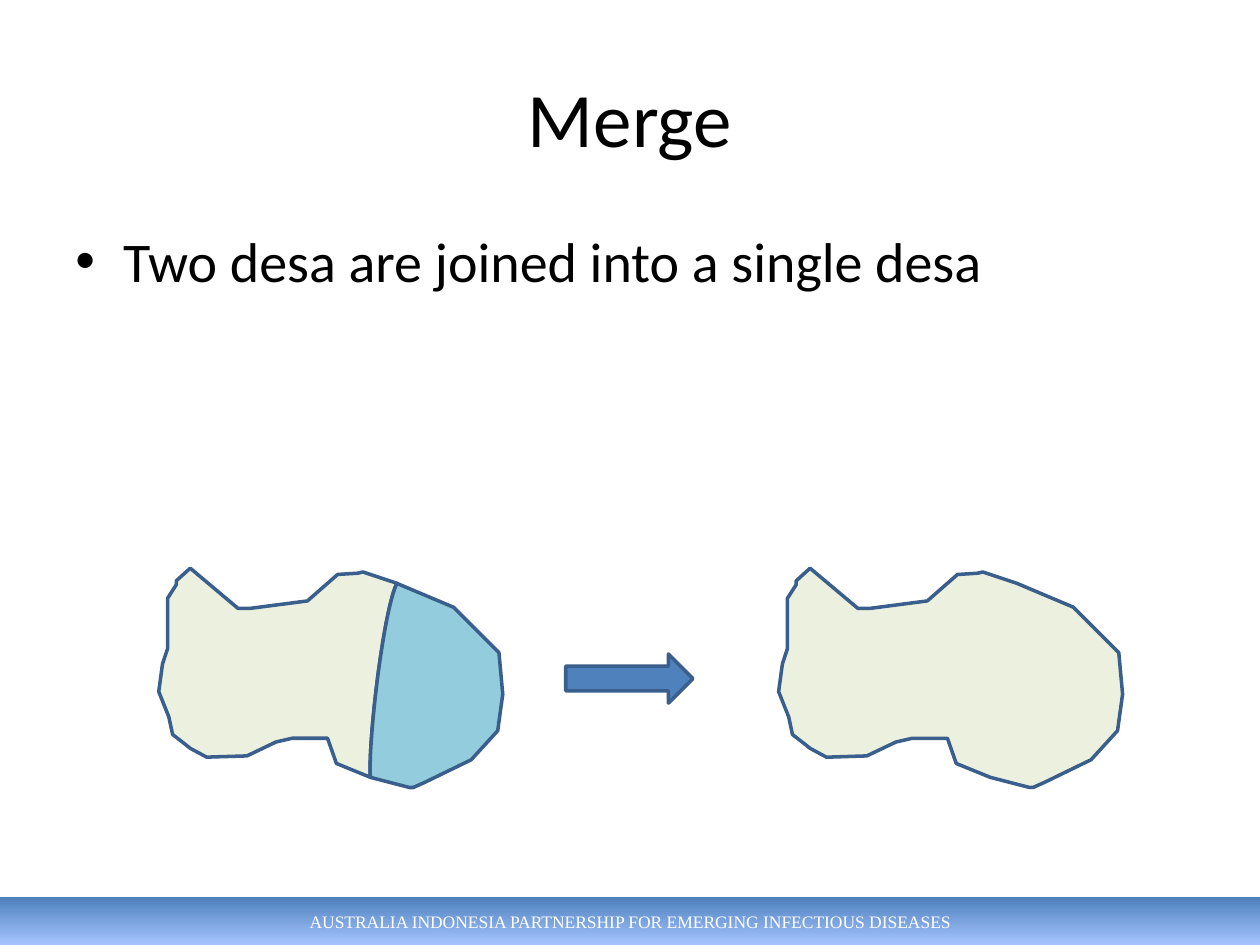
from lxml import etree
from pptx import Presentation, util as u
from pptx.dml.color import RGBColor
from pptx.enum import shapes, text
from pptx.oxml.ns import qn

SCALE = 9144
BLACK, WHITE, BLUE = "000000", "FFFFFF", "4F81BD"
OUTLINE, CREAM, AQUA = "3A5F8C", "EBF1DE", "93CDDD"

DIVIDER_CURVE = [(189, 12), (178, 35), (166, 139), (168, 166)]
WEST_BORDER = [
    (168, 166), (141, 155), (134, 135), (106, 135), (93, 138), (70, 149),
    (38, 150), (25, 143), (20, 139), (11, 132), (8, 118), (0, 98), (3, 76),
    (7, 64), (7, 24), (14, 13), (14, 10), (25, 0), (63, 32), (72, 32),
    (118, 26), (142, 5), (158, 4), (162, 3), (189, 12),
]
EAST_BORDER = [
    (189, 12), (234, 31), (270, 67), (273, 100), (269, 129), (248, 152),
    (211, 170), (202, 174), (199, 174), (168, 166),
]


def px(*lengths):
    """Turn px lengths into EMU."""
    return [u.Emu(round(length * SCALE)) for length in lengths]


def color(value):
    """Return the colour of a hex string."""
    return RGBColor.from_string(value)


def apply(target, formats):
    """Set each attribute of a target from a dict."""
    for name, value in formats.items():
        setattr(target, name, value)


def write(shape, words, size, font, ink, align, anchor):
    """Write one formatted paragraph into a shape and return it."""
    frame = shape.text_frame
    apply(frame, {"word_wrap": True, "vertical_anchor": anchor})
    paragraph = frame.paragraphs[0]
    paragraph.alignment = align
    run = paragraph.add_run()
    run.text = words
    apply(run.font, {"size": u.Pt(size), "name": font})
    run.font.color.rgb = color(ink)
    return paragraph


def paint(shape, fill):
    """Give a map shape a flat fill and the shared outline."""
    shape.shadow.inherit = False
    shape.fill.solid()
    shape.fill.fore_color.rgb = color(fill)
    shape.line.color.rgb = color(OUTLINE)
    shape.line.width = u.Pt(2)


def curve(points, steps=24):
    """Sample a cubic Bezier curve, ends included."""
    samples = []
    for step in range(steps + 1):
        t = step / steps
        weights = ((1 - t) ** 3, 3 * t * (1 - t) ** 2, 3 * t * t * (1 - t), t ** 3)
        samples.append(tuple(
            sum(weight * point[axis] for weight, point in zip(weights, points))
            for axis in (0, 1)))
    return samples


def add_title(slide, box, words):
    """Place and format the title placeholder."""
    title = slide.shapes.title
    apply(title, dict(zip(("left", "top", "width", "height"), px(*box))))
    write(title, words, 44, "Calibri", BLACK,
          text.PP_ALIGN.CENTER, text.MSO_ANCHOR.MIDDLE)


def add_body(slide, box, words):
    """Add the bulleted body text."""
    body = slide.shapes.add_textbox(*px(*box))
    paragraph = write(body, words, 32, "Calibri", BLACK,
                      text.PP_ALIGN.LEFT, text.MSO_ANCHOR.TOP)
    properties = paragraph._p.get_or_add_pPr()
    indent, = px(38)
    properties.set("marL", str(indent))
    properties.set("indent", str(-indent))
    etree.SubElement(properties, qn("a:buFont")).set("typeface", "Arial")
    etree.SubElement(properties, qn("a:buChar")).set("char", "•")


def add_footer(slide, box, words):
    """Add the gradient band with the programme name."""
    band = slide.shapes.add_shape(shapes.MSO_SHAPE.RECTANGLE, *px(*box))
    band.shadow.inherit = False
    band.line.fill.background()
    band.fill.gradient()
    band.fill.gradient_angle = 270
    for stop, shade in zip(band.fill.gradient_stops, (BLUE, "A4C4FF")):
        stop.color.rgb = color(shade)
    write(band, words, 10, "Times New Roman", WHITE,
          text.PP_ALIGN.CENTER, text.MSO_ANCHOR.MIDDLE)


def add_region(slide, left, top, border, fill):
    """Draw a closed border relative to a map corner."""
    points = [px(left + x, top + y) for x, y in border]
    builder = slide.shapes.build_freeform(*points[0])
    builder.add_line_segments(points[1:], close=True)
    paint(builder.convert_to_shape(), fill)


def add_merge_diagram(slide, left, top):
    """Draw the two desa, the arrow and the merged desa."""
    divider = curve(DIVIDER_CURVE)
    add_region(slide, left + 492, top, WEST_BORDER + EAST_BORDER[1:-1], CREAM)
    add_region(slide, left, top, WEST_BORDER + divider[1:-1], CREAM)
    add_region(slide, left, top, EAST_BORDER + divider[-2:0:-1], AQUA)
    arrow = slide.shapes.add_shape(
        shapes.MSO_SHAPE.RIGHT_ARROW, *px(left + 323, top + 68, 101, 39))
    paint(arrow, BLUE)


def main():
    """Build and save the presentation."""
    presentation = Presentation()
    width, height = px(1000, 750)
    apply(presentation, {"slide_width": width, "slide_height": height})
    slide = presentation.slides.add_slide(presentation.slide_layouts[5])
    add_footer(slide, (0, 712, 1000, 38),
               "AUSTRALIA INDONESIA PARTNERSHIP FOR EMERGING INFECTIOUS DISEASES")
    add_title(slide, (50, 30, 900, 125), "Merge")
    add_body(slide, (50, 175, 900, 495), "Two desa are joined into a single desa")
    add_merge_diagram(slide, 126, 451)
    presentation.save("out.pptx")


if __name__ == "__main__":
    main()
